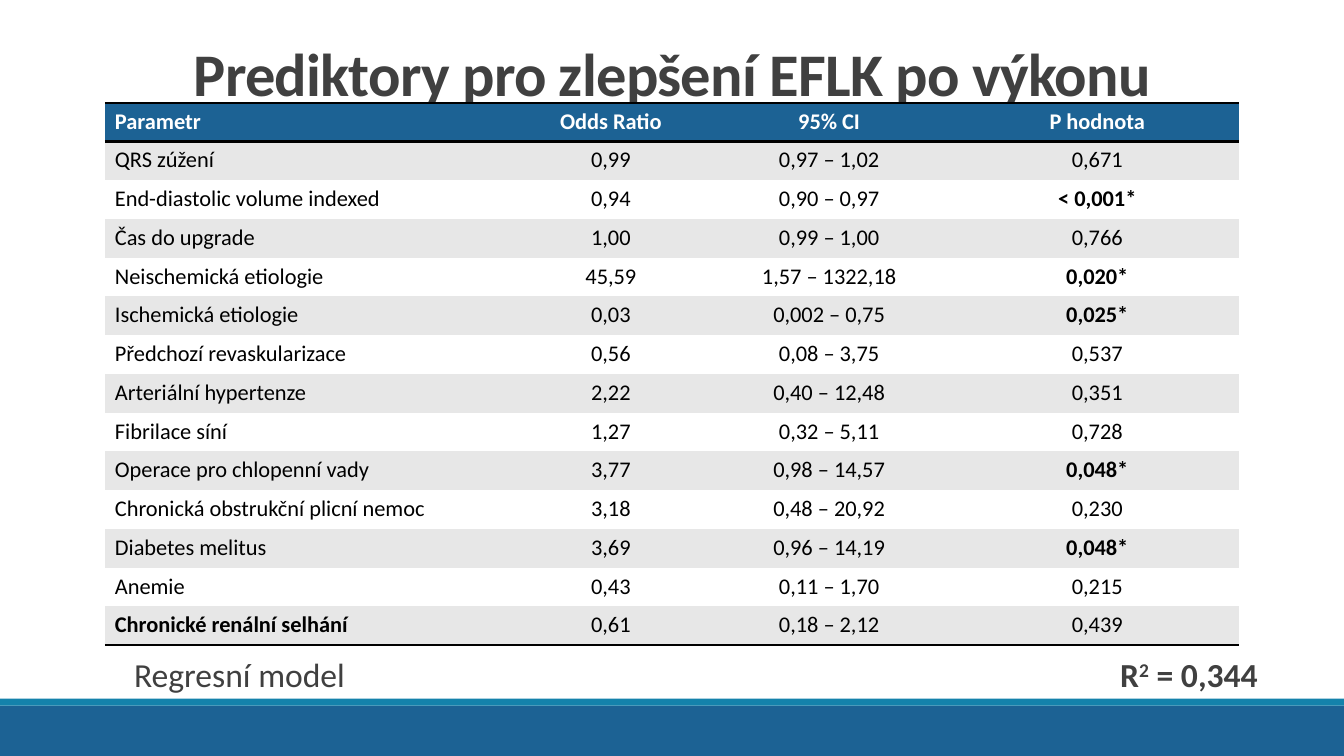
from lxml.etree import SubElement
from pptx import Presentation
from pptx.dml.color import RGBColor as RGB
from pptx.enum.shapes import MSO_SHAPE as SHAPE
from pptx.enum.text import MSO_ANCHOR as ANCHOR, MSO_AUTO_SIZE as AUTO, PP_ALIGN as ALIGN
from pptx.oxml.ns import qn
from pptx.util import Emu, Inches, Pt

COLORS = {"blue": "1C6294", "teal": "1482AB", "text": "404040", "black": "000000",
          "white": "FFFFFF", "gray": "E7E7E7"}
FONT = "Calibri"
NO_STYLE = "{2D5ABB26-0587-4C30-8999-92F81FD0307C}"

HEADER = ("Parametr", "Odds Ratio", "95% CI", "P hodnota")
PREDICTORS = [
    ("QRS zúžení", "0,99", "0,97 – 1,02", "0,671"),
    ("End-diastolic volume indexed", "0,94", "0,90 – 0,97", "< 0,001*"),
    ("Čas do upgrade", "1,00", "0,99 – 1,00", "0,766"),
    ("Neischemická etiologie", "45,59", "1,57 – 1322,18", "0,020*"),
    ("Ischemická etiologie", "0,03", "0,002 – 0,75", "0,025*"),
    ("Předchozí revaskularizace", "0,56", "0,08 – 3,75", "0,537"),
    ("Arteriální hypertenze", "2,22", "0,40 – 12,48", "0,351"),
    ("Fibrilace síní", "1,27", "0,32 – 5,11", "0,728"),
    ("Operace pro chlopenní vady", "3,77", "0,98 – 14,57", "0,048*"),
    ("Chronická obstrukční plicní nemoc", "3,18", "0,48 – 20,92", "0,230"),
    ("Diabetes melitus", "3,69", "0,96 – 14,19", "0,048*"),
    ("Anemie", "0,43", "0,11 – 1,70", "0,215"),
    ("Chronické renální selhání", "0,61", "0,18 – 2,12", "0,439"),
]


def color(name):
    return RGB.from_string(COLORS[name])


def add_text(p, text, size=24, fill="text", bold=False, spacing=None, baseline=None):
    r = p.add_run()
    r.text = text
    r.font.name, r.font.size, r.font.bold = FONT, Pt(size), bold
    r.font.color.rgb = color(fill)
    for key, value in (("spc", spacing), ("baseline", baseline)):
        if value is not None:
            r._r.get_or_add_rPr().set(key, str(value))


def add_border(cell, side, width=2):
    ln = SubElement(cell._tc.get_or_add_tcPr(), qn(f"a:{side}"), w=str(Pt(width)))
    solid = SubElement(ln, qn("a:solidFill"))
    SubElement(solid, qn("a:srgbClr"), val=COLORS["black"])


class SlideBuilder:
    """Lengths are percentages of the slide's width and height."""

    def __init__(self, prs):
        self.width, self.height = prs.slide_width, prs.slide_height
        self.slide = prs.slides.add_slide(prs.slide_layouts[5])
        self.shapes = self.slide.shapes

    def x(self, share):
        return Emu(round(self.width * share / 100))

    def y(self, share):
        return Emu(round(self.height * share / 100))

    def box(self, left, top, width, height):
        return self.x(left), self.y(top), self.x(width), self.y(height)

    def band(self, top, height, fill):
        sp = self.shapes.add_shape(SHAPE.RECTANGLE, *self.box(0, top, 100, height))
        sp.shadow.inherit = False
        sp.fill.solid()
        sp.fill.fore_color.rgb = color(fill)
        sp.line.fill.background()

    def title(self, text, *box):
        sp = self.shapes.title
        sp.left, sp.top, sp.width, sp.height = self.box(*box)
        tf = sp.text_frame
        tf.auto_size, tf.vertical_anchor = AUTO.NONE, ANCHOR.BOTTOM
        p = tf.paragraphs[0]
        p.alignment, p.line_spacing = ALIGN.CENTER, 0.85
        add_text(p, text, size=43.2, bold=True, spacing=-50)

    def note(self, runs, *box):
        tf = self.shapes.add_textbox(*self.box(*box)).text_frame
        tf.word_wrap = True
        tf.margin_left = tf.margin_right = 0
        p = tf.paragraphs[0]
        p.line_spacing, p.space_before, p.space_after = 0.9, Pt(12), Pt(2)
        for text, style in runs:
            add_text(p, text, **style)

    def table(self, rows, columns, left, top, height):
        frame = self.shapes.add_table(len(rows), len(columns),
                                      *self.box(left, top, sum(columns), height))
        table = frame.table
        table._tbl.tblPr.find(qn("a:tableStyleId")).text = NO_STYLE
        for column, width in zip(table.columns, columns):
            column.width = self.x(width)
        last = len(rows) - 1
        for i, values in enumerate(rows):
            table.rows[i].height = self.y(height / len(rows))
            fill = "blue" if i == 0 else "gray" if i % 2 else "white"
            for j, value in enumerate(values):
                cell = table.cell(i, j)
                if i == 0:
                    add_border(cell, "lnT")
                if i in (0, last):
                    add_border(cell, "lnB")
                cell.fill.solid()
                cell.fill.fore_color.rgb = color(fill)
                p = cell.text_frame.paragraphs[0]
                p.alignment = ALIGN.CENTER if j else ALIGN.LEFT
                # Header, significant values and the last parameter are bold
                bold = i == 0 or value.endswith("*") or (i == last and j == 0)
                add_text(p, value, size=16, fill="black" if i else "white", bold=bold)


def main():
    prs = Presentation()
    prs.slide_width, prs.slide_height = Inches(13.33), Inches(7.5)
    s = SlideBuilder(prs)

    # Footer bands
    s.band(93.33, 6.67, "blue")
    s.band(92.4, 0.93, "teal")

    # Title and regression table
    s.title("Prediktory pro zlepšení EFLK po výkonu", 8.78, 3.2, 82.5, 11.87)
    s.table([HEADER, *PREDICTORS], (30.83, 13.65, 18.83, 21.08), 7.8, 13.6, 71.73)

    # Model notes
    s.note([("Regresní model", {})], 9.98, 86.4, 67.5, 6.8)
    s.note([("R", {"bold": True}), ("2", {"bold": True, "baseline": 30000}),
            (" = 0,344", {"bold": True})], 83.35, 86.4, 13.43, 6.8)

    prs.save("out.pptx")


if __name__ == "__main__":
    main()
